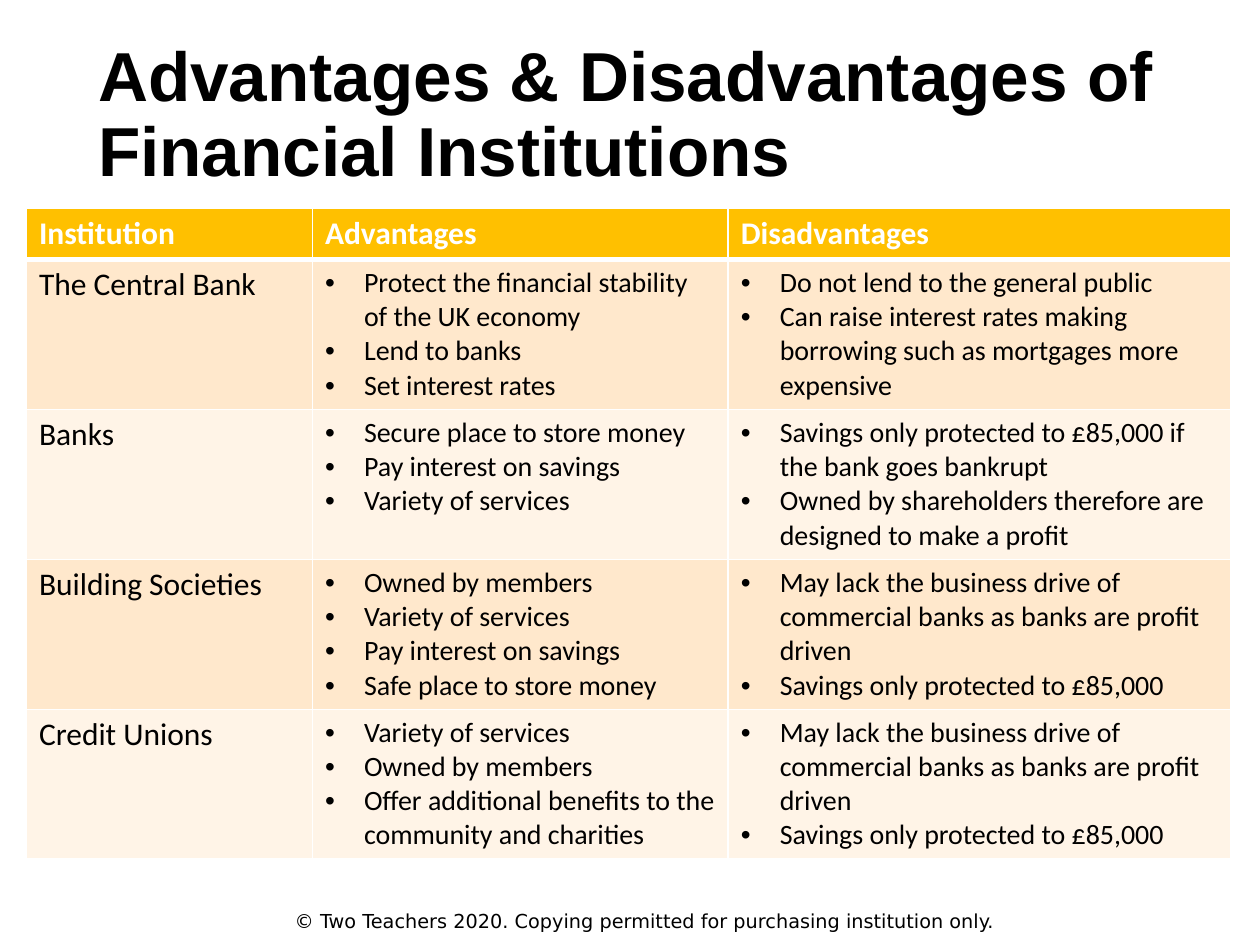
from dataclasses import dataclass

from lxml.etree import SubElement
from pptx import Presentation
from pptx.dml.color import RGBColor
from pptx.enum.text import MSO_ANCHOR
from pptx.oxml.ns import qn
from pptx.util import Inches, Pt


@dataclass(frozen=True)
class Theme:
    ink: str = "000000"
    white: str = "FFFFFF"
    head: str = "FFC000"
    bands: tuple = ("FFE8CC", "FFF4E7")
    title: float = 39.6
    label: float = 18
    body: float = 16
    foot: float = 11
    sans: str = "Arial"
    text: str = "Calibri"
    note: str = "DejaVu Sans"


THEME = Theme()

HEADS = ("Institution", "Advantages", "Disadvantages")
LACK = "May lack the business drive of commercial banks as banks are profit driven"
LIMIT = "Savings only protected to £85,000"
ROWS = (
    ("The Central Bank",
     ("Protect the financial stability of the UK economy",
      "Lend to banks",
      "Set interest rates"),
     ("Do not lend to the general public",
      "Can raise interest rates making borrowing such as mortgages more expensive")),
    ("Banks",
     ("Secure place to store money",
      "Pay interest on savings",
      "Variety of services"),
     (f"{LIMIT} if the bank goes bankrupt",
      "Owned by shareholders therefore are designed to make a profit")),
    ("Building Societies",
     ("Owned by members",
      "Variety of services",
      "Pay interest on savings",
      "Safe place to store money"),
     (LACK, LIMIT)),
    ("Credit Unions",
     ("Variety of services",
      "Owned by members",
      "Offer additional benefits to the community and charities"),
     (LACK, LIMIT)),
)


def add_run(para, text, size, face, color=THEME.ink, bold=False):
    run = para.add_run()
    run.text = text
    font = run.font
    font.size, font.name, font.bold = Pt(size), face, bold
    font.color.rgb = RGBColor.from_string(color)


def add_text(slide, box, text, size, face, bold=False, pitch=None):
    frame = slide.shapes.add_textbox(*map(Inches, box)).text_frame
    frame.word_wrap = True
    frame.vertical_anchor = MSO_ANCHOR.MIDDLE
    para = frame.paragraphs[0]
    para.line_spacing = pitch
    add_run(para, text, size, face, bold=bold)


def set_bullet(para):
    props = para._p.get_or_add_pPr()
    props.set("marL", str(Inches(0.31)))
    props.set("indent", str(Inches(-0.31)))
    SubElement(props, qn("a:buFont"), typeface="Arial")
    SubElement(props, qn("a:buChar"), char="•")


def style_cell(cell, fill, base=1):
    """Set white borders, with the bottom one base points wide, and the fill."""
    props = cell._tc.get_or_add_tcPr()
    for side, width in (("L", 1), ("R", 1), ("T", 1), ("B", base)):
        line = SubElement(props, qn(f"a:ln{side}"), w=str(Pt(width)))
        paint = SubElement(line, qn("a:solidFill"))
        SubElement(paint, qn("a:srgbClr"), val=THEME.white)
    cell.fill.solid()
    cell.fill.fore_color.rgb = RGBColor.from_string(fill)


def fill_list(cell, items):
    frame = cell.text_frame
    for i, item in enumerate(items):
        para = frame.add_paragraph() if i else frame.paragraphs[0]
        set_bullet(para)
        add_run(para, item, THEME.body, THEME.text)


def add_grid(slide):
    box = map(Inches, (0.21, 1.65, 9.56, 5.07))
    grid = slide.shapes.add_table(len(ROWS) + 1, len(HEADS), *box).table
    for col, width in zip(grid.columns, (2.27, 3.3, 3.99)):
        col.width = Inches(width)
    for i, row in enumerate(grid.rows):
        row.height = Inches(1.19 if i else 0.41)

    for cell, head in zip(grid.rows[0].cells, HEADS):
        style_cell(cell, THEME.head, base=3)
        add_run(cell.text_frame.paragraphs[0], head, THEME.label, THEME.text,
                THEME.white, bold=True)

    for i, (name, *lists) in enumerate(ROWS):
        cells = list(grid.rows[i + 1].cells)
        for cell in cells:
            style_cell(cell, THEME.bands[i % 2])
        add_run(cells[0].text_frame.paragraphs[0], name, THEME.label, THEME.text)
        for cell, items in zip(cells[1:], lists):
            fill_list(cell, items)


def main():
    deck = Presentation()
    deck.slide_width, deck.slide_height = Inches(10), Inches(7.5)
    slide = deck.slides.add_slide(deck.slide_layouts[6])
    add_text(slide, (2.24, 7.15, 6.69, 0.31),
             "© Two Teachers 2020. Copying permitted for purchasing institution only.",
             THEME.foot, THEME.note)
    add_text(slide, (0.68, 0.2, 8.62, 1.45),
             "Advantages & Disadvantages of Financial Institutions",
             THEME.title, THEME.sans, bold=True, pitch=0.9)
    add_grid(slide)
    deck.save("out.pptx")


if __name__ == "__main__":
    main()
